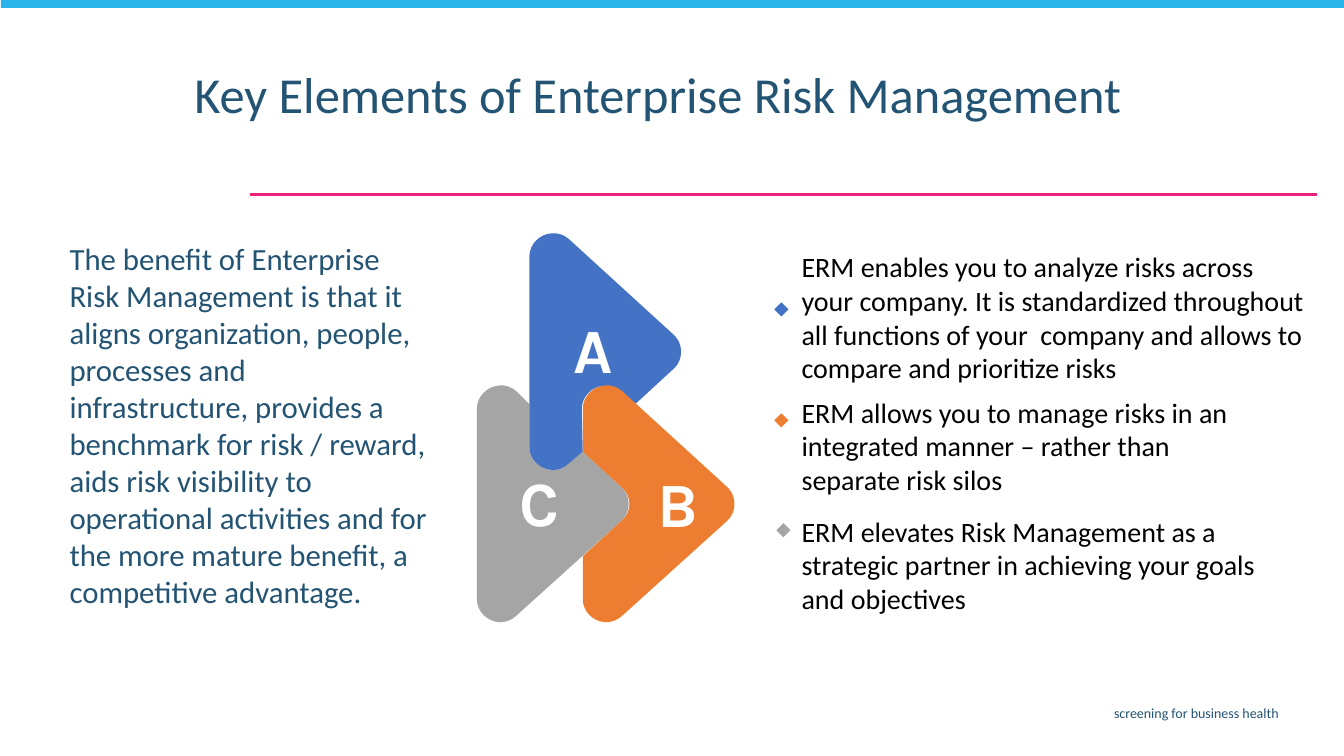
from lxml.etree import SubElement
from pptx import Presentation
from pptx.dml.color import RGBColor
from pptx.enum.shapes import MSO_CONNECTOR, MSO_SHAPE
from pptx.enum.text import MSO_ANCHOR, PP_ALIGN
from pptx.oxml.ns import qn
from pptx.util import Inches, Pt

NAVY = RGBColor(0x24, 0x54, 0x73)
SKY = RGBColor(0x29, 0xB3, 0xE8)
PINK = RGBColor(0xEC, 0x21, 0x79)
BLUE = RGBColor(0x44, 0x72, 0xC4)
ORANGE = RGBColor(0xED, 0x7D, 0x31)
GRAY = RGBColor(0xA5, 0xA5, 0xA5)
WHITE = RGBColor(0xFF, 0xFF, 0xFF)
BLACK = RGBColor(0, 0, 0)

# Blade corners, in inches from the blade's top left; six numbers are a Bezier curve
TOP = [(0.39, 0.13), (0.24, 0, 0, 0.11, 0, 0.31)]
BOTTOM = [(0, 2.19), (0, 2.39, 0.24, 2.5, 0.39, 2.36)]
TIP = [(1.43, 1.42), (1.53, 1.33, 1.53, 1.17, 1.43, 1.08)]

# Notches where the next blade lies on top
LEFT_NOTCH = [(0, 0.73), (0.38, 1.08), (0.49, 1.17, 0.49, 1.33, 0.38, 1.42), (0, 1.77)]
LOWER_NOTCH = [(0.53, 2.24), (0.52, 1.82), (0.52, 1.62, 0.76, 1.51, 0.91, 1.65), (1.05, 1.77)]
UPPER_NOTCH = [(1.05, 0.73), (0.91, 0.85), (0.76, 0.99, 0.52, 0.88, 0.52, 0.68), (0.52, 0.26)]

# Letter, colour, blade offset, outline, letter centre offset
BLADES = [
    ("C", GRAY, (0, 1.51), TOP + BOTTOM + TIP + UPPER_NOTCH, (0.6, 1.22)),
    ("A", BLUE, (0.52, 0), TOP + BOTTOM + LOWER_NOTCH + TIP, (0.62, 1.22)),
    ("B", ORANGE, (1.05, 1.51), TOP + LEFT_NOTCH + BOTTOM + TIP, (0.92, 1.23)),
]

# Text, colour, top, width and height of the text, left and top of the marker
POINTS = [
    ("ERM enables you to analyze risks across your company. It is standardized throughout "
     "all functions of your  company and allows to compare and prioritize risks",
     BLUE, 0, 5.11, 1.38, 0, 0.54),
    ("ERM allows you to manage risks in an integrated manner – rather than separate risk silos",
     ORANGE, 1.44, 4.61, 1.05, 0, 1.64),
    ("ERM elevates Risk Management as a strategic partner in achieving your goals and objectives",
     GRAY, 2.62, 4.61, 1.05, 0.02, 2.73),
]


def fill_plain(sp, color):
    sp.shadow.inherit = False
    sp.fill.solid()
    sp.fill.fore_color.rgb = color
    sp.line.fill.background()


def add_text(s, text, box, size, color, font="Calibri", inset=(0.1, 0.05), wrap=True):
    tf = s.shapes.add_textbox(*map(Inches, box)).text_frame
    tf.word_wrap = wrap
    tf.margin_left = tf.margin_right = Inches(inset[0])
    tf.margin_top = tf.margin_bottom = Inches(inset[1])
    p = tf.paragraphs[0]
    p.text = text
    r = p.runs[0]
    r.font.name = font
    r.font.size = Pt(size)
    r.font.color.rgb = color
    return tf


def add_frame(s, width):
    # Top bar, rule under the title and tagline
    bar = s.shapes.add_shape(MSO_SHAPE.RECTANGLE, Inches(0.01), Inches(-0.02),
                             Inches(width), Inches(0.1))
    fill_plain(bar, SKY)
    rule = s.shapes.add_connector(MSO_CONNECTOR.STRAIGHT, Inches(2.48), Inches(1.93),
                                  Inches(13.06), Inches(1.93))
    rule.line.color.rgb = PINK
    rule.line.width = Pt(1.5)
    SubElement(rule._element.spPr, qn("a:effectLst"))
    tf = add_text(s, "screening for business health", (3.65, 6.94, 9.13, 0.29), 10, NAVY)
    tf.paragraphs[0].alignment = PP_ALIGN.RIGHT


def add_title(s, box):
    tf = add_text(s, "Key Elements of Enterprise Risk Management", box, 36, NAVY)
    tf.paragraphs[0].line_spacing = 0.9


def add_benefit(s, box):
    add_text(s, "The benefit of Enterprise Risk Management is that it aligns organization, "
             "people, processes and infrastructure, provides a benchmark for risk / reward, "
             "aids risk visibility to operational activities and for the more mature benefit, "
             "a competitive advantage.", box, 22, NAVY, inset=(0.09, 0.04))


def add_points(s, left, top):
    for text, color, dy, width, height, marker_dx, marker_dy in POINTS:
        marker = s.shapes.add_shape(MSO_SHAPE.DIAMOND, Inches(left + marker_dx),
                                    Inches(top + marker_dy), Inches(0.14), Inches(0.14))
        fill_plain(marker, color)
        add_text(s, text, (left + 0.23, top + dy, width, height), 20, BLACK,
                 inset=(0.04, 0.02))


def trace(outline, steps=12):
    # Turn corners and curves into a list of points
    points = []
    for part in outline:
        if len(part) == 2:
            points.append(part)
            continue
        xs, ys = ((start,) + part[i::2] for i, start in enumerate(points[-1]))
        for k in range(1, steps + 1):
            t = k / steps
            weights = ((1 - t) ** 3, 3 * t * (1 - t) ** 2, 3 * t * t * (1 - t), t ** 3)
            points.append(tuple(sum(w * c for w, c in zip(weights, cs)) for cs in (xs, ys)))
    return points


def add_blades(s, left, top):
    for _, color, (dx, dy), outline, _ in BLADES:
        points = [(Inches(left + dx + x), Inches(top + dy + y)) for x, y in trace(outline)]
        builder = s.shapes.build_freeform(*points[0])
        builder.add_line_segments(points[1:], close=True)
        fill_plain(builder.convert_to_shape(), color)
    # Letters go above all blades
    width, height = 0.56, 0.86
    for letter, _, (dx, dy), _, (cx, cy) in BLADES:
        box = (left + dx + cx - width / 2, top + dy + cy - height / 2, width, height)
        tf = add_text(s, letter, box, 45, WHITE, font="Karla", wrap=False)
        tf.vertical_anchor = MSO_ANCHOR.MIDDLE
        p = tf.paragraphs[0]
        p.alignment = PP_ALIGN.CENTER
        p.runs[0].font.bold = True
        p.runs[0]._r.get_or_add_rPr().set("spc", "-110")


def main():
    prs = Presentation()
    prs.slide_width = Inches(13.33)
    prs.slide_height = Inches(7.5)
    s = prs.slides.add_slide(prs.slide_layouts[6])
    add_frame(s, 13.34)
    add_title(s, (1.83, 0.65, 9.68, 0.76))
    add_benefit(s, (0.6, 2.34, 3.74, 4.25))
    add_points(s, 7.68, 2.46)
    add_blades(s, 4.73, 2.24)
    prs.save("out.pptx")


if __name__ == "__main__":
    main()
